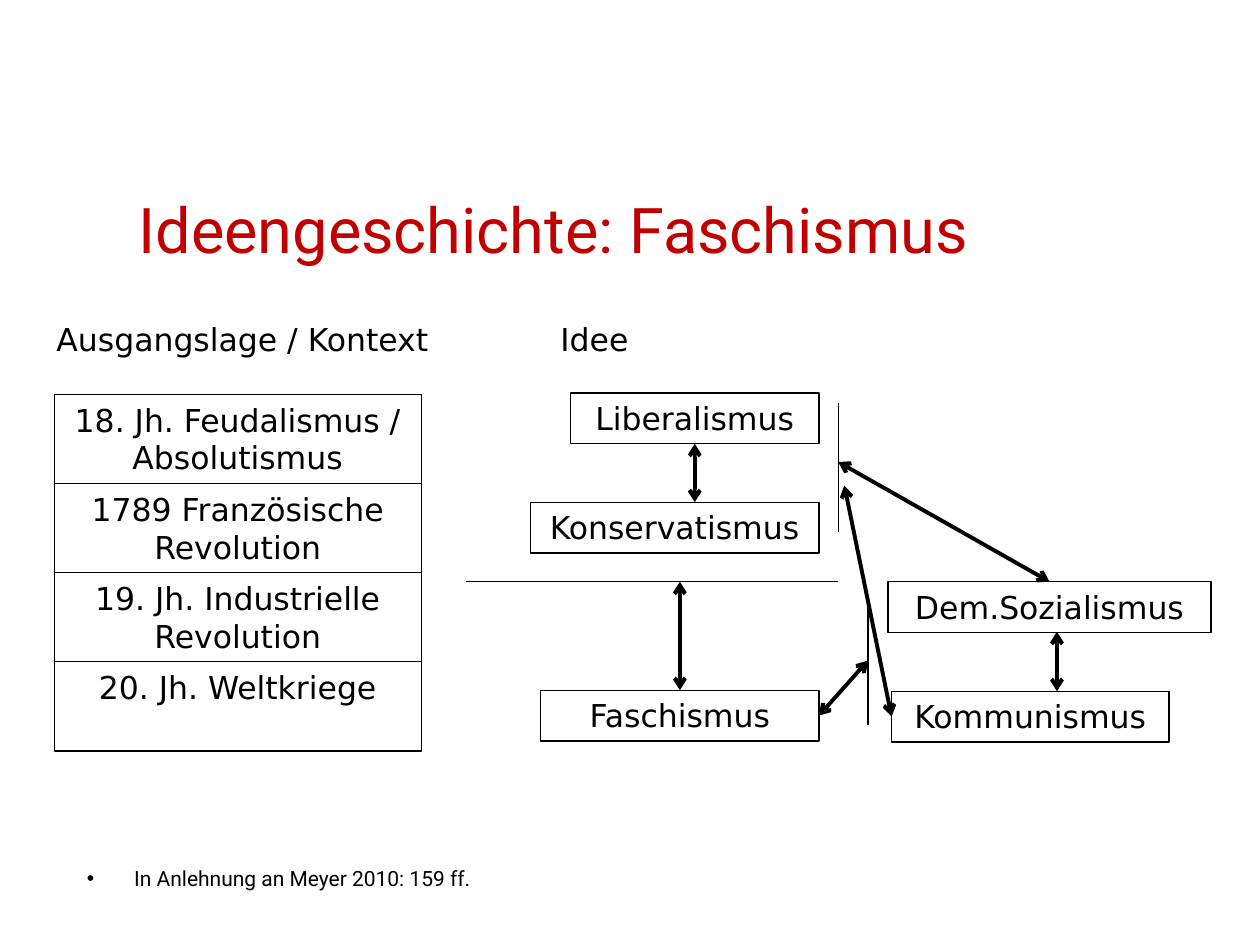
from lxml.etree import SubElement as Sub
from pptx import Presentation
from pptx.dml.color import RGBColor
from pptx.enum.shapes import MSO_CONNECTOR as Link, MSO_SHAPE as Form
from pptx.enum.text import MSO_ANCHOR as Anchor, MSO_AUTO_SIZE as Auto, PP_ALIGN as Align
from pptx.oxml.ns import qn
from pptx.util import Pt


def color(code):
    return RGBColor.from_string(code)


class Page:
    sans, head = "DejaVu Sans", "Roboto"
    black, red = "000000", "C00000"
    thin, thick = 0.75, 2.25

    def __init__(self, slide):
        self.slide = slide
        self.shapes = slide.shapes

    def fill_in(self, shape, text, size, face, ink, align=Align.LEFT, anchor=Anchor.TOP):
        frame = shape.text_frame
        frame.text = text
        frame.word_wrap = True
        frame.auto_size = Auto.NONE
        frame.vertical_anchor = anchor
        par = frame.paragraphs[0]
        par.alignment = align
        par.space_before = Pt(0)
        par.font.size = Pt(size)
        par.font.name = face
        par.font.color.rgb = color(ink)

    def place(self, shape, x, y, w, h):
        shape.left, shape.top, shape.width, shape.height = Pt(x), Pt(y), Pt(w), Pt(h)

    def title(self, text, *spot):
        shape = self.shapes.title
        self.place(shape, *spot)
        self.fill_in(shape, text, 36, self.head, self.red, anchor=Anchor.BOTTOM)

    def source(self, text, *spot):
        shape = self.slide.placeholders[1]
        self.place(shape, *spot)
        props = shape.text_frame.paragraphs[0]._p.get_or_add_pPr()
        props.set("marL", "0")
        props.set("indent", "0")
        Sub(props, qn("a:buNone"))
        self.fill_in(shape, text, 12, self.head, self.black)

    def label(self, text, x, y, w, h):
        shape = self.shapes.add_textbox(Pt(x), Pt(y), Pt(w), Pt(h))
        self.fill_in(shape, text, 18, self.sans, self.black)

    def box(self, text, x, y, w, h):
        shape = self.shapes.add_shape(Form.RECTANGLE, Pt(x), Pt(y), Pt(w), Pt(h))
        shape.shadow.inherit = False
        shape.fill.background()
        shape.line.color.rgb = color(self.black)
        shape.line.width = Pt(self.thin)
        self.fill_in(shape, text, 18, self.sans, self.black, Align.CENTER)
        return shape

    def line(self, x1, y1, x2, y2, width=thin):
        link = self.shapes.add_connector(Link.STRAIGHT, Pt(x1), Pt(y1), Pt(x2), Pt(y2))
        link.line.color.rgb = color(self.black)
        link.line.width = Pt(width)
        Sub(link._element.spPr, qn("a:effectLst"))
        return link

    def arrow(self, *ends, start=None, stop=None):
        link = self.line(*ends, width=self.thick)
        for tag in ("a:headEnd", "a:tailEnd"):
            Sub(link.line._get_or_add_ln(), qn(tag), type="arrow")
        if start:
            link.begin_connect(*start)
        if stop:
            link.end_connect(*stop)


def main():
    deck = Presentation()
    deck.slide_width, deck.slide_height = Pt(720), Pt(540)
    page = Page(deck.slides.add_slide(deck.slide_layouts[1]))

    # Title, source and column heads
    page.title("Ideengeschichte: Faschismus", 72, 65.5, 576, 90)
    page.source("In Anlehnung an Meyer 2010: 159 ff.", 42.5, 491, 576, 23)
    page.label("Ausgangslage / Kontext\t\t\tIdee", 25.2, 179.3, 556, 29)

    # Ideas
    high = 29
    lib = page.box("Liberalismus", 326, 224.6, 142, high)
    page.box("Konservatismus", 303, 287, 165, high)
    kom = page.box("Kommunismus", 509.5, 395, 158.5, high)
    soz = page.box("Dem.Sozialismus", 507.5, 332.4, 184.5, high)
    fas = page.box("Faschismus", 309, 394.4, 159, high)

    # Historical context, stacked
    times = ("18. Jh. Feudalismus / Absolutismus", "1789 Französische Revolution",
             "19. Jh. Industrielle Revolution", "20. Jh. Weltkriege")
    for i, text in enumerate(times):
        page.box(text, 31, 225.4 + 50.9 * i, 209.7, 51)

    # Brackets that group ideas
    page.line(479, 230.4, 479, 304)
    page.line(479, 332.4, 266.4, 332.4)
    page.line(496, 340.5, 496, 414.5)

    # Opposing ideas
    page.arrow(397, 253.6, 397, 287, start=(lib, 2))
    page.arrow(479, 264, 599.8, 332.4, stop=(soz, 0))
    page.arrow(604, 361, 604, 395)
    page.arrow(482.5, 277.5, 509.5, 409.5, stop=(kom, 1))
    page.arrow(468, 409, 496, 377.5, start=(fas, 3))
    page.arrow(388.5, 332.4, 388.5, 394.4, stop=(fas, 0))

    deck.save("out.pptx")


if __name__ == "__main__":
    main()
